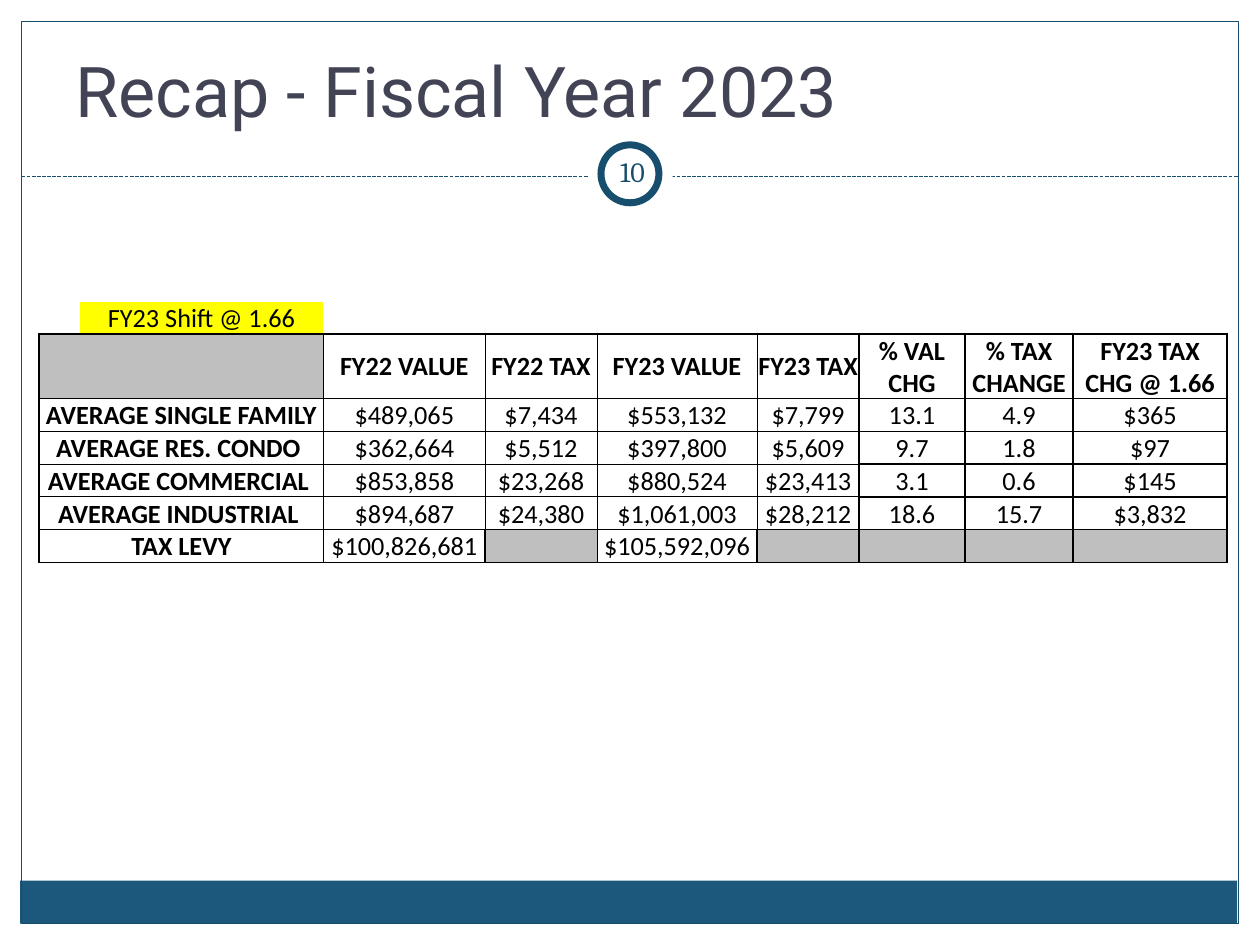
from lxml import etree
from pptx import Presentation
from pptx.dml.color import RGBColor
from pptx.enum.dml import MSO_LINE
from pptx.enum.shapes import MSO_CONNECTOR, MSO_SHAPE
from pptx.enum.text import MSO_ANCHOR, PP_ALIGN
from pptx.oxml import parse_xml
from pptx.oxml.ns import nsdecls, qn
from pptx.util import Inches, Pt


def color(value):
    return RGBColor.from_string(value)


def style_paragraph(paragraph, size, name, value, bold=False):
    paragraph.font.size = Pt(size)
    paragraph.font.name = name
    paragraph.font.bold = bold
    paragraph.font.color.rgb = color(value)


presentation = Presentation()
presentation.slide_width, presentation.slide_height = Inches(10), Inches(7.5)
slide = presentation.slides.add_slide(presentation.slide_layouts[6])

divider = slide.shapes.add_connector(
    MSO_CONNECTOR.STRAIGHT, Inches(0.17), Inches(1.4), Inches(9.83), Inches(1.4))
divider.line.color.rgb = color("184E6D")
divider.line.width = Pt(0.75)
divider.line.dash_style = MSO_LINE.SQUARE_DOT
etree.SubElement(divider._element.spPr, qn("a:effectLst"))
divider_element = divider._element

RECT, OVAL = MSO_SHAPE.RECTANGLE, MSO_SHAPE.OVAL
decorations = [
    (RECT, 0, 0, 10, 1.52, "FFFFFF", None),
    (RECT, 0, 0, 0.17, 7.5, "FFFFFF", None),
    (RECT, 9.83, 0, 0.17, 7.5, "FFFFFF", None),
    (RECT, 0.16, 6.99, 9.66, 0.34, "1B587C", None),
    (RECT, 0.17, 0.17, 9.66, 7.16, None, 0.75),
    (OVAL, 4.67, 1.05, 0.67, 0.67, "FFFFFF", None),
    (OVAL, 4.77, 1.15, 0.46, 0.46, "FFFFFF", 4),
]
for kind, left, top, width, height, fill, line_width in decorations:
    shape = slide.shapes.add_shape(
        kind, Inches(left), Inches(top), Inches(width), Inches(height))
    shape.shadow.inherit = False
    if fill:
        shape.fill.solid()
        shape.fill.fore_color.rgb = color(fill)
    else:
        shape.fill.background()
        shape._element.addnext(divider_element)
    if line_width:
        shape.line.color.rgb = color("184E6D")
        shape.line.width = Pt(line_width)
    else:
        shape.line.fill.background()

title = slide.shapes.add_textbox(Inches(0.5), Inches(0.33), Inches(8.42), Inches(1.08))
title.text_frame.word_wrap = True
title.text_frame.text = "Recap - Fiscal Year 2023"
style_paragraph(title.text_frame.paragraphs[0], 40, "Roboto", "424456")

number = slide.shapes.add_textbox(Inches(4.77), Inches(1.12), Inches(0.5), Inches(0.48))
frame = number.text_frame
frame.word_wrap = True
frame.vertical_anchor = MSO_ANCHOR.MIDDLE
frame.margin_left = frame.margin_right = Inches(0.05)
frame.margin_top = frame.margin_bottom = Inches(0.05)
frame.text = "10"
frame.paragraphs[0].alignment = PP_ALIGN.CENTER
style_paragraph(frame.paragraphs[0], 16, "Cambria", "184E6D")

column_widths = [0.32, 1.94, 0.74, 0.54, 0.49, 0.4, 0.65, 0.62,
                 0.26, 0.55, 0.49, 0.35, 0.86, 0.57, 0.65]
groups = [(0, 1), (2, 3), (4, 5), (6, 7), (8, 9), (10, 11), (12, 12), (13, 14)]
rows = [
    ["", "FY22 VALUE", "FY22 TAX", "FY23 VALUE", "FY23 TAX",
     "% VAL CHG", "% TAX CHANGE", "FY23 TAX CHG @ 1.66"],
    ["AVERAGE SINGLE FAMILY", "$489,065", "$7,434", "$553,132", "$7,799",
     "13.1", "4.9", "$365"],
    ["AVERAGE RES. CONDO ", "$362,664", "$5,512", "$397,800", "$5,609",
     "9.7", "1.8", "$97"],
    ["AVERAGE COMMERCIAL ", "$853,858", "$23,268", "$880,524", "$23,413",
     "3.1", "0.6", "$145"],
    ["AVERAGE INDUSTRIAL ", "$894,687", "$24,380", "$1,061,003", "$28,212",
     "18.6", "15.7", "$3,832"],
    ["TAX LEVY", "$100,826,681", "", "$105,592,096", "", "", "", ""],
]
row_height = 2.05 / 8
table = slide.shapes.add_table(
    len(rows) + 1, len(column_widths),
    Inches(0.31), Inches(2.39), Inches(9.41), Inches(2.05)).table
table.first_row = table.horz_banding = False
for column, width in zip(table.columns, column_widths):
    column.width = Inches(width)
for index, row in enumerate(table.rows):
    row.height = Inches(row_height * (2 if index == 1 else 1))

cells = [(0, index, "FY23 Shift @ 1.66" if index == 1 else "",
          "FFFF00" if index == 1 else None, False, {"B": 1})
         for index in range(len(column_widths))]
for row_index, values in enumerate(rows, 1):
    for group, (value, (first, last)) in enumerate(zip(values, groups)):
        heavy_columns = {0, 5, 6, 7, 8} | ({2, 4} if row_index == 6 else set())
        heavy_rows = {1, 6, 7}
        borders = {
            "L": 1 if group in heavy_columns else 0.5,
            "R": 1 if group + 1 in heavy_columns else 0.5,
            "T": 1 if group >= 5 or row_index in heavy_rows else 0.5,
            "B": 1 if group >= 5 or row_index + 1 in heavy_rows else 0.5,
        }
        bold = row_index == 1 or group == 0
        for index in range(first, last + 1):
            cells.append((row_index, index, value if index == first else "",
                          None if value else "BFBFBF", bold, borders))
        if last > first:
            table.cell(row_index, first).merge(table.cell(row_index, last))

for row_index, index, value, fill, bold, borders in cells:
    cell = table.cell(row_index, index)
    cell.margin_left = cell.margin_right = cell.margin_top = Inches(0.01)
    cell.margin_bottom = 0
    cell.vertical_anchor = MSO_ANCHOR.MIDDLE if row_index else MSO_ANCHOR.BOTTOM
    paragraph = cell.text_frame.paragraphs[0]
    paragraph.alignment = PP_ALIGN.CENTER
    if value:
        paragraph.add_run().text = value
    else:
        etree.SubElement(paragraph._p, qn("a:endParaRPr")).set("sz", "1000")
    style_paragraph(paragraph, 15, "Calibri", "000000", bold)
    if fill:
        cell.fill.solid()
        cell.fill.fore_color.rgb = color(fill)
    else:
        cell.fill.background()
    properties = cell._tc.get_or_add_tcPr()
    sides = [side for side in "LRTB" if side in borders]
    for position, side in enumerate(sides):
        properties.insert(position, parse_xml(
            f'<a:ln{side} {nsdecls("a")} w="{Pt(borders[side])}"><a:solidFill>'
            f'<a:srgbClr val="000000"/></a:solidFill></a:ln{side}>'))

presentation.save("out.pptx")
